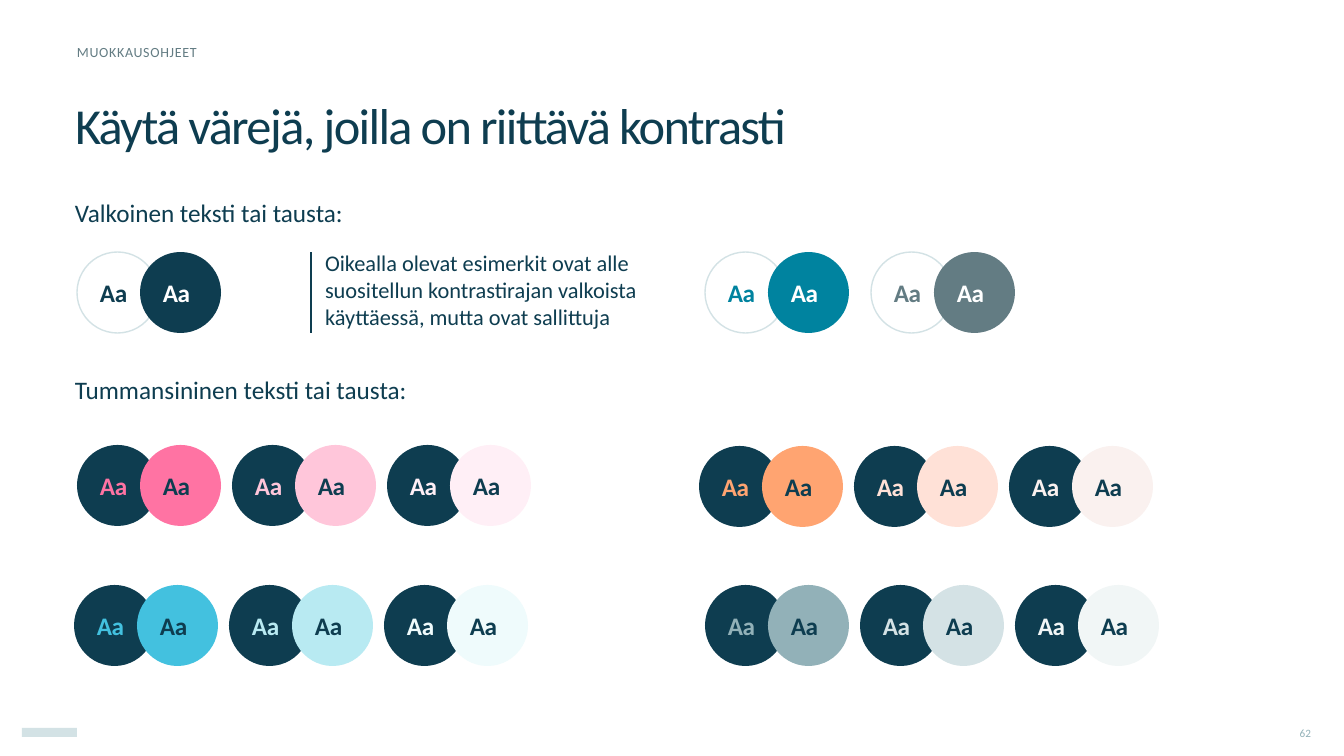
from dataclasses import dataclass
from lxml.etree import SubElement
from pptx import Presentation
from pptx.dml.color import RGBColor
from pptx.enum.shapes import MSO_CONNECTOR, MSO_SHAPE
from pptx.enum.text import MSO_ANCHOR, PP_ALIGN
from pptx.oxml.ns import qn
from pptx.util import Pt


@dataclass(frozen=True)
class Theme:
    font: str = "Calibri"
    navy: str = "0E3D50"
    white: str = "FFFFFF"
    ring: str = "D3E2E5"
    teal: str = "00839F"
    slate: str = "637C83"
    mist: str = "92B1B8"
    title: int = 36
    head: int = 18
    note: int = 16
    label: int = 10
    page: int = 8


T = Theme()

TITLE = "Käytä värejä, joilla on riittävä kontrasti"
LABEL = "MUOKKAUSOHJEET"
PAGE = "62"
HEADS = [
    ("Valkoinen teksti tai tausta:", 197),
    ("Tummansininen teksti tai tausta:", 374),
]
NOTE = ("Oikealla olevat esimerkit ovat alle suositellun kontrastirajan "
        "valkoista käyttäessä, mutta ovat sallittuja")
SAMPLE = "Aa"
GROUPS = [
    (77, 252, 166, T.white, [T.navy]),
    (705, 252, 166, T.white, [T.teal, T.slate]),
    (77, 445, 155, T.navy, ["FF73A3", "FFC6DA", "FFEFF6"]),
    (699, 446, 155, T.navy, ["FFA471", "FFE1D7", "FAF1EF"]),
    (74, 585, 155, T.navy, ["43C1DF", "B8EAF2", "EFFBFC"]),
    (705, 585, 155, T.navy, [T.mist, "D4E2E5", "F1F6F6"]),
]
DISC = 81
SHIFT = 63

SCALE = 914400 / 100.8


def px(n):
    return round(n * SCALE)


def rgb(code):
    return RGBColor.from_string(code)


deck = Presentation()
deck.slide_width, deck.slide_height = px(1344), px(756)
slide = deck.slides.add_slide(deck.slide_layouts[6])
shapes = slide.shapes


def write(text, x, y, w, h, size, color, space=0, bold=False,
          mid=False, pad=0):
    box = shapes.add_textbox(px(x), px(y), px(w), px(h))
    frame = box.text_frame
    frame.word_wrap = True
    frame.margin_left = frame.margin_right = px(pad)
    frame.margin_top = frame.margin_bottom = px(pad / 2)
    frame.vertical_anchor = MSO_ANCHOR.MIDDLE if mid else MSO_ANCHOR.TOP
    para = frame.paragraphs[0]
    para.text = text
    font = para.font
    font.name, font.size, font.bold = T.font, Pt(size), bold
    font.color.rgb = rgb(color)
    if space:
        para._p.pPr.find(qn("a:defRPr")).set("spc", str(space))
    return para


def draw(kind, x, y, w, h, fill, line=None):
    shape = shapes.add_shape(kind, px(x), px(y), px(w), px(h))
    shape.shadow.inherit = False
    shape.fill.solid()
    shape.fill.fore_color.rgb = rgb(fill)
    if line:
        shape.line.color.rgb = rgb(line)
        shape.line.width = Pt(1)
    else:
        shape.line.fill.background()


def disc(x, y, fill, ink):
    line = T.ring if fill == T.white else None
    draw(MSO_SHAPE.OVAL, x, y, DISC, DISC, fill, line)
    write(SAMPLE, x + 23, y + 25, 43, 30, T.head, ink, -30, True)


draw(MSO_SHAPE.RECTANGLE, 22, 728, 55, 9, T.ring)
write(TITLE, 75, 69, 992, 119, T.title, T.navy, -120, mid=True).line_spacing = 0.9
write(LABEL, 77, 37, 794, 29, T.label, T.slate, 50, mid=True)
write(PAGE, 1267, 723, 44, 20, T.page, T.mist, mid=True).alignment = PP_ALIGN.RIGHT

for text, y in HEADS:
    write(text, 75, y, 681, 30, T.head, T.navy)

for left, top, step, base, tints in GROUPS:
    for i, tint in enumerate(tints):
        x = left + i * step
        disc(x, top, base, tint)
        disc(x + SHIFT, top, tint, base)

rule = shapes.add_connector(MSO_CONNECTOR.STRAIGHT, px(311), px(252), px(311), px(333))
rule.line.color.rgb = rgb(T.navy)
rule.line.width = Pt(1)
SubElement(rule._element.spPr, qn("a:effectLst"))
write(NOTE, 315, 244, 381, 92, T.note, T.navy, pad=10)

deck.save("out.pptx")
